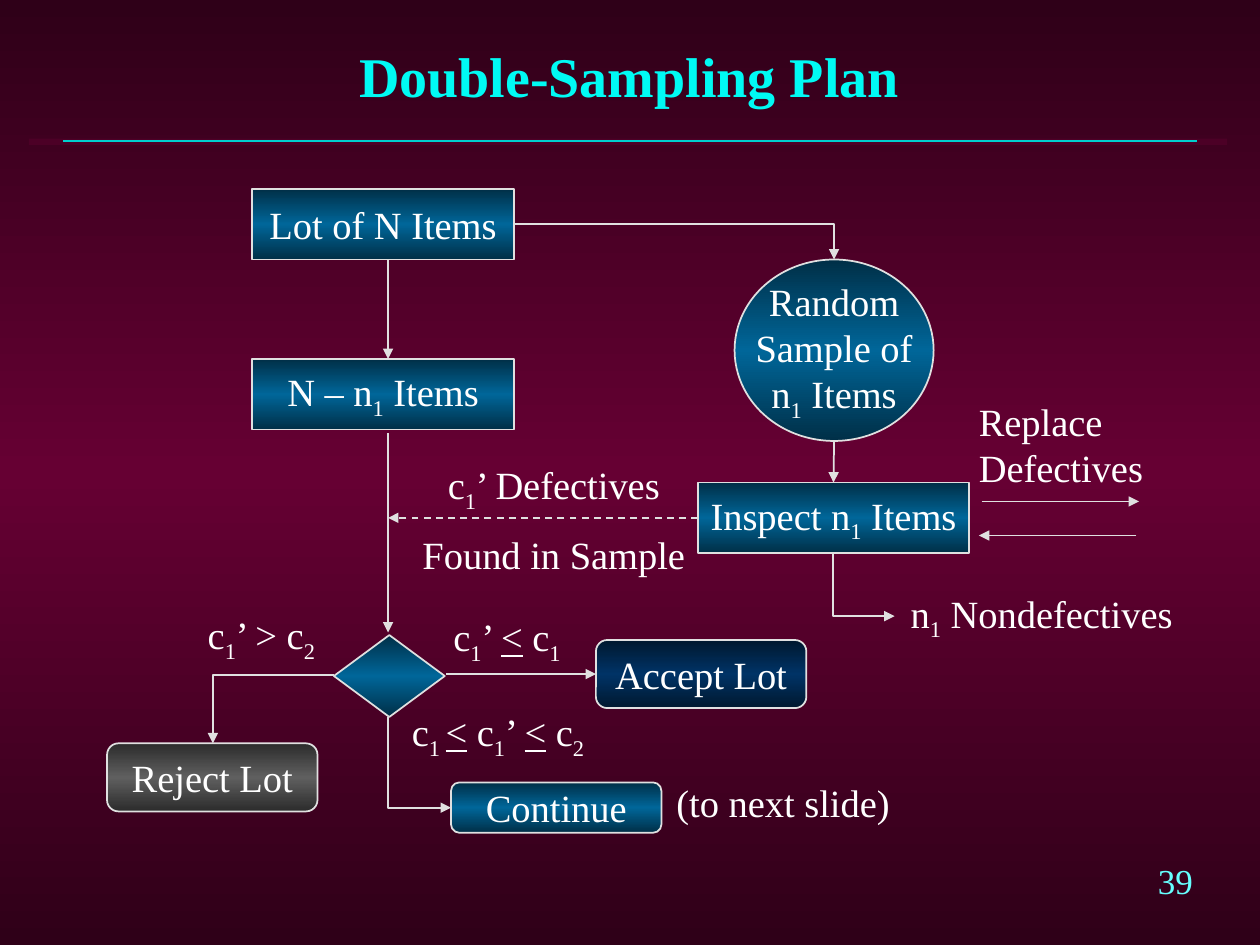
from copy import deepcopy

from lxml import etree
from pptx import Presentation
from pptx import util as u
from pptx.dml.color import RGBColor
from pptx.enum import dml, shapes, text
from pptx.oxml.ns import qn

COLORS = {
    "bar": "4C0026", "rule": "00CECE", "number": "66FFFF", "title": "00FAF4",
    "text": "FFFFFF", "line": "E0E0E0", "shadow": "000000",
}
GRADIENTS = {
    "background": ("2F0018", "660033"), "step": ("002F47", "006699"),
    "accept": ("00182F", "003366"), "reject": ("2C2C2C", "5F5F5F"),
}
FONT = "Times New Roman"
KIND = shapes.MSO_SHAPE
CENTER = text.PP_ALIGN.CENTER


def rgb(name):
    """Return the named colour."""
    return RGBColor.from_string(COLORS[name])


def apply(target, values):
    """Set every attribute in values on target."""
    for name, value in values.items():
        setattr(target, name, value)


def place(box, x, y, w, h):
    """Turn an offset inside a region box into slide lengths."""
    return [u.Inches(n) for n in (box[0] + x, box[1] + y, w, h)]


def shade(fill, name):
    """Fill with a vertical gradient that is lightest in the middle."""
    edge, middle = GRADIENTS[name]
    fill.gradient()
    fill.gradient_angle = 90
    first = fill.gradient_stops[0]._gs
    first.addnext(deepcopy(first))
    for stop, color, position in zip(fill.gradient_stops, (edge, middle, edge), (0, 0.5, 1)):
        stop.color.rgb = RGBColor.from_string(color)
        stop.position = position


def write(frame, lines, align=None, size=22, color="text", gap=0):
    """Write lines whose pieces split at |, with _ for subscript and ~ for underline."""
    frame.word_wrap = False
    for index, line in enumerate(lines):
        paragraph = frame.paragraphs[0] if index == 0 else frame.add_paragraph()
        paragraph.alignment = align
        if index and gap:
            paragraph.space_before = u.Pt(gap)
        for piece in line.split("|"):
            run = paragraph.add_run()
            run.text = piece.lstrip("_~")
            apply(run.font, {"name": FONT, "size": u.Pt(size)})
            run.font.color.rgb = rgb(color)
            if piece.startswith("_"):
                run.font._rPr.set("baseline", "-25000")
            if piece.startswith("~"):
                run.font.underline = True


def label(slide, area, lines, **style):
    """Add a free-standing text."""
    frame = slide.shapes.add_textbox(*area).text_frame
    frame.auto_size = text.MSO_AUTO_SIZE.SHAPE_TO_FIT_TEXT
    write(frame, lines, **style)


def node(slide, area, kind, lines=(), look="step"):
    """Add one flowchart node."""
    step = slide.shapes.add_shape(kind, *area)
    step.shadow.inherit = False
    shade(step.fill, look)
    step.line.color.rgb = rgb("line")
    step.line.width = u.Pt(1)
    step.text_frame.vertical_anchor = text.MSO_ANCHOR.MIDDLE
    write(step.text_frame, lines, CENTER)
    return step


def link(slide, box, start, end, kind=shapes.MSO_CONNECTOR.STRAIGHT, color="line", arrow=True):
    """Add a line between two offsets inside a region box."""
    points = place(box, *start, 0, 0)[:2] + place(box, *end, 0, 0)[:2]
    line = slide.shapes.add_connector(kind, *points)
    line.line.color.rgb = rgb(color)
    line.line.width = u.Pt(1)
    if arrow:
        etree.SubElement(line.line._get_or_add_ln(), qn("a:tailEnd"), type="triangle")
    etree.SubElement(line._element.spPr, qn("a:effectLst"))
    return line


def bend(slide, box, start, end, down_first=False):
    """Add an arrow with a single right-angle turn."""
    arrow = link(slide, box, start, end, shapes.MSO_CONNECTOR.ELBOW)
    properties = arrow._element.spPr
    properties.find(qn("a:prstGeom")).set("prst", "bentConnector2")
    if down_first:
        width, height = arrow.width, arrow.height
        apply(arrow, {
            "left": arrow.left + (width - height) // 2,
            "top": arrow.top + (height - width) // 2,
            "width": height, "height": width,
        })
        frame = properties.find(qn("a:xfrm"))
        frame.set("rot", "16200000")
        frame.set("flipH", "1")


def header(slide, box):
    """Place the title and the rule below it."""
    bar = slide.shapes.add_shape(KIND.RECTANGLE, *place(box, 0, 1.02, 9.51, 0.05))
    bar.shadow.inherit = False
    bar.fill.solid()
    bar.fill.fore_color.rgb = rgb("bar")
    bar.line.fill.background()
    link(slide, box, (0.27, 1.04), (9.27, 1.04), color="rule", arrow=False)
    title = slide.shapes.title
    area = place(box, 0.1, 0, 9.33, 1.04)
    apply(title, dict(zip(("left", "top", "width", "height"), area)))
    write(title.text_frame, ["Double-Sampling Plan"], CENTER, 32, "title")
    apply(title.text_frame, {"word_wrap": True, "vertical_anchor": text.MSO_ANCHOR.MIDDLE})
    font = title.text_frame.paragraphs[0].runs[0].font
    font.bold = True
    effects = etree.Element(qn("a:effectLst"))
    shadow = etree.SubElement(effects, qn("a:outerShdw"), dist="38100", dir="2700000")
    etree.SubElement(shadow, qn("a:srgbClr"), val=COLORS["shadow"])
    font._rPr.find(qn("a:solidFill")).addnext(effects)


def sampling(slide, box):
    """Place the lot, the sample, its inspection and their links."""
    node(slide, place(box, 0, 0, 2.08, 0.56), KIND.RECTANGLE, ["Lot of N Items"])
    node(slide, place(box, 3.83, 0.56, 1.58, 1.44), KIND.OVAL,
         ["Random", "Sample of", "n|_1| Items"])
    node(slide, place(box, 0, 1.35, 2.08, 0.56), KIND.RECTANGLE, ["N – n|_1| Items"])
    inspect = node(slide, place(box, 3.54, 2.33, 2.15, 0.56), KIND.RECTANGLE,
                   ["Inspect n|_1| Items"])
    link(slide, box, (1.08, 0.56), (1.08, 1.35))
    link(slide, box, (1.08, 1.94), (1.08, 3.52))
    link(slide, box, (4.62, 2), (4.62, 2.33)).end_connect(inspect, 0)
    found = link(slide, box, (3.54, 2.61), (1.08, 2.61))
    found.line.dash_style = dml.MSO_LINE.DASH
    found.begin_connect(inspect, 1)
    link(slide, box, (5.79, 2.48), (7.04, 2.48))
    link(slide, box, (7.02, 2.75), (5.77, 2.75))
    bend(slide, box, (2.08, 0.28), (4.62, 0.56))
    bend(slide, box, (4.61, 2.9), (5.1, 3.39), down_first=True)
    label(slide, place(box, 5.67, 1.61, 1.51, 0.83), ["Replace", "Defectives"])
    label(slide, place(box, 5.13, 3.13, 2.3, 0.47), ["n|_1| Nondefectives"])
    label(slide, place(box, 1.25, 2.11, 2.29, 0.97),
          ["c|_1|’ Defectives", "Found in Sample"], align=CENTER, gap=10)


def decision(slide, box):
    """Place the decision, its three outcomes and their conditions."""
    node(slide, place(box, 1.8, 0.24, 0.88, 0.65), KIND.DIAMOND)
    outcomes = [
        ((0, 1.1, 1.67, 0.54), "Reject Lot", "reject"),
        ((2.73, 1.41, 1.67, 0.4), "Continue", "step"),
        ((3.88, 0.28, 1.67, 0.54), "Accept Lot", "accept"),
    ]
    for area, outcome, look in outcomes:
        accept = node(slide, place(box, *area), KIND.ROUNDED_RECTANGLE, [outcome], look)
    link(slide, box, (2.69, 0.55), (3.88, 0.55)).end_connect(accept, 1)
    bend(slide, box, (1.8, 0.56), (0.84, 1.1))
    bend(slide, box, (2.23, 0.89), (2.73, 1.61), down_first=True)
    conditions = [
        ((0.7, 0, 1.11, 0.47), "c|_1|’ > c|_2"),
        ((2.65, 0.02, 1.11, 0.47), "c|_1|’ |~<| c|_1"),
        ((2.32, 0.77, 1.67, 0.47), "c|_1 |~<| c|_1|’ |~<| c|_2"),
        ((4.42, 1.33, 1.9, 0.47), "(to next slide)"),
    ]
    for area, condition in conditions:
        label(slide, place(box, *area), [condition])


def footer(slide, box):
    """Place the slide number."""
    label(slide, place(box, 0, 0, 0.52, 0.43), ["39"], size=20, color="number")


def main():
    """Build and save the slide."""
    deck = Presentation()
    apply(deck, {"slide_width": u.Inches(10), "slide_height": u.Inches(7.5)})
    slide = deck.slides.add_slide(deck.slide_layouts[5])
    shade(slide.background.fill, "background")
    header(slide, (0.23, 0.08))
    sampling(slide, (2, 1.5))
    decision(slide, (0.85, 4.8))
    footer(slide, (9.09, 6.77))
    deck.save("out.pptx")


if __name__ == "__main__":
    main()
